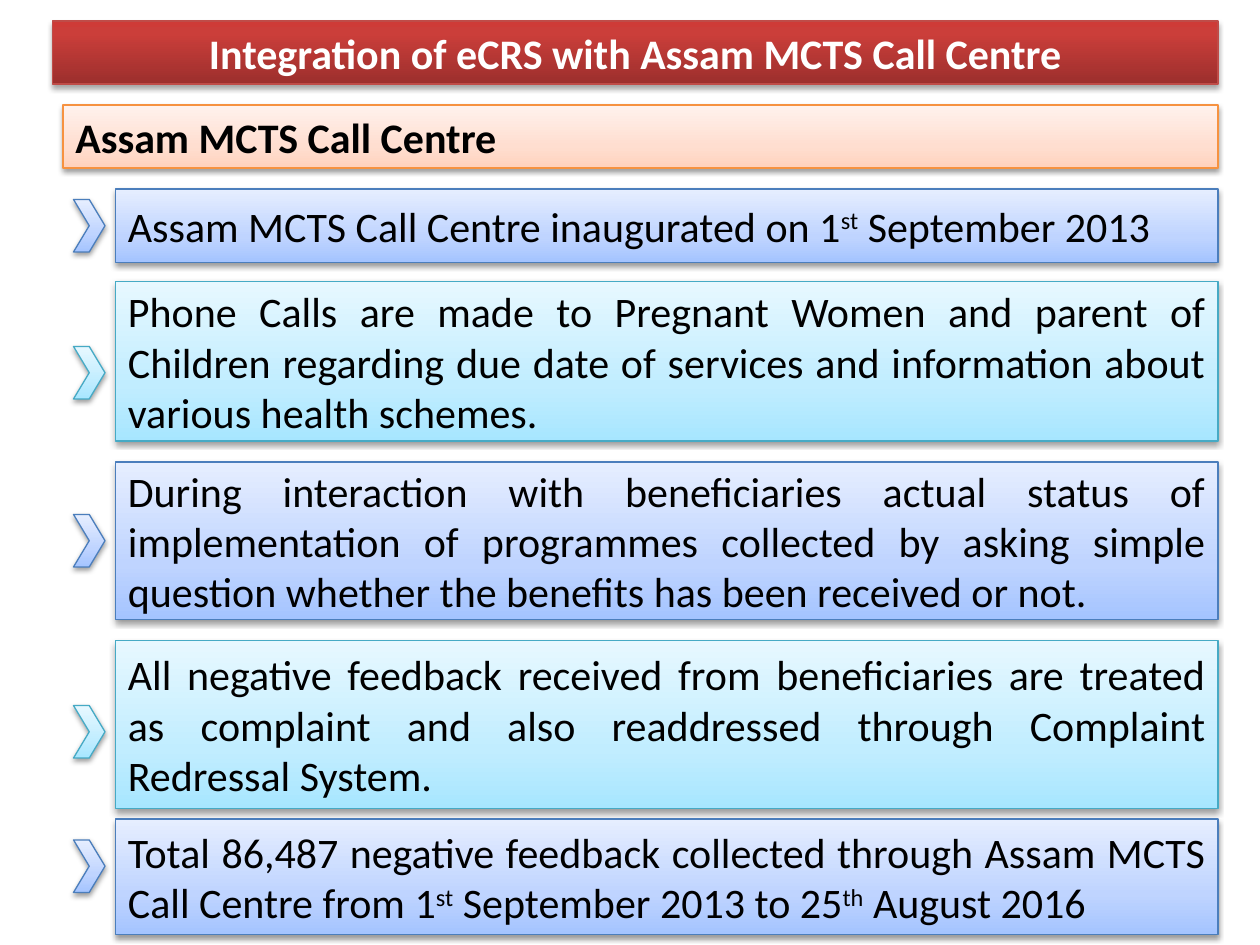
from copy import deepcopy

from lxml import etree
from pptx import Presentation
from pptx.dml import color
from pptx.enum import shapes, text
from pptx.oxml import ns
from pptx.util import Pt

# Each style: gradient stops from bottom to top, line, shadow opacity and distance
RED = ([(0, "9C2F2D"), (0.8, "CB3E3A"), (1, "CE3B37")], "BF4C48", 35, 1.8)
ORANGE = ([(0, "FFD2BD"), (0.35, "FFDED0"), (1, "FFF2ED")], "F69240", 38, 1.6)
BLUE = ([(0, "A4C4FF"), (0.35, "BFD4FF"), (1, "E6EEFF")], "4B7EBC", 38, 1.6)
AQUA = ([(0, "A7E6FF"), (0.35, "C1EDFF"), (1, "E7F8FF")], "46AAC5", 38, 1.6)

# Box top, box height, chevron top, runs (every second run is superscript)
POINTS = [
    (108, 42, 114, ["Assam MCTS Call Centre inaugurated on 1", "st", " September 2013"]),
    (160.8, 91.2, 198, [
        "Phone Calls are made to Pregnant Women and parent of Children regarding "
        "due date of services and information about various health schemes."]),
    (264, 90, 294, [
        "During interaction with beneficiaries actual status of implementation of "
        "programmes collected by asking simple question whether the benefits has "
        "been received or not."]),
    (366, 96, 403.2, [
        "All negative feedback received from beneficiaries are treated as complaint "
        "and also readdressed through Complaint Redressal System."]),
    (468, 66, 480, [
        "Total 86,487 negative feedback collected through Assam MCTS Call Centre from 1",
        "st", " September 2013 to 25", "th", " August 2016"]),
]


def rgb(value):
    return color.RGBColor.from_string(value)


def fill_gradient(shape, stops):
    """Fill the shape with any number of stops, running upwards."""
    shape.fill.gradient()
    shape.fill.gradient_angle = 90
    stop_list = shape._element.spPr.find(".//" + ns.qn("a:gsLst"))
    for _ in stops[2:]:
        stop_list.append(deepcopy(stop_list[0]))
    for stop, (position, value) in zip(shape.fill.gradient_stops, stops):
        stop.position = position
        stop.color.rgb = rgb(value)


def add_shadow(shape, opacity, distance):
    shape.shadow.inherit = False
    effects = shape._element.spPr.find(ns.qn("a:effectLst"))
    shadow = etree.SubElement(
        effects, ns.qn("a:outerShdw"), blurRad=str(Pt(3.1)), dist=str(Pt(distance)),
        dir="5400000", rotWithShape="0")
    black = etree.SubElement(shadow, ns.qn("a:srgbClr"), val="000000")
    etree.SubElement(black, ns.qn("a:alpha"), val=str(opacity * 1000))


def add_styled_shape(slide, kind, left, top, width, height, style):
    stops, line, opacity, distance = style
    shape = slide.shapes.add_shape(kind, Pt(left), Pt(top), Pt(width), Pt(height))
    fill_gradient(shape, stops)
    shape.line.color.rgb = rgb(line)
    shape.line.width = Pt(0.75)
    add_shadow(shape, opacity, distance)
    return shape


def add_box(slide, left, top, width, height, style, runs, align,
            font_color="000000", bold=False):
    box = add_styled_shape(
        slide, shapes.MSO_SHAPE.RECTANGLE, left, top, width, height, style)
    frame = box.text_frame
    frame.word_wrap = True
    frame.vertical_anchor = text.MSO_ANCHOR.MIDDLE
    paragraph = frame.paragraphs[0]
    paragraph.alignment = align
    for index, words in enumerate(runs):
        run = paragraph.add_run()
        run.text = words
        run.font.name = "Calibri"
        run.font.size = Pt(24)
        run.font.bold = bold
        run.font.color.rgb = rgb(font_color)
        if index % 2:
            run._r.get_or_add_rPr().set("baseline", "30000")


def main():
    presentation = Presentation()
    presentation.slide_width, presentation.slide_height = Pt(720), Pt(540)
    slide = presentation.slides.add_slide(presentation.slide_layouts[6])

    add_box(slide, 30, 12, 666, 36, RED,
            ["Integration of eCRS with Assam MCTS Call Centre"],
            text.PP_ALIGN.CENTER, "FFFFFF", bold=True)
    add_box(slide, 36, 60, 660, 36, ORANGE, ["Assam MCTS Call Centre"],
            text.PP_ALIGN.LEFT, bold=True)

    for index, (top, height, chevron_top, runs) in enumerate(POINTS):
        style = AQUA if index % 2 else BLUE
        add_box(slide, 66, top, 630, height, style, runs, text.PP_ALIGN.JUSTIFY)
        add_styled_shape(
            slide, shapes.MSO_SHAPE.CHEVRON, 42, chevron_top, 18, 30, style)

    presentation.save("out.pptx")


if __name__ == "__main__":
    main()
